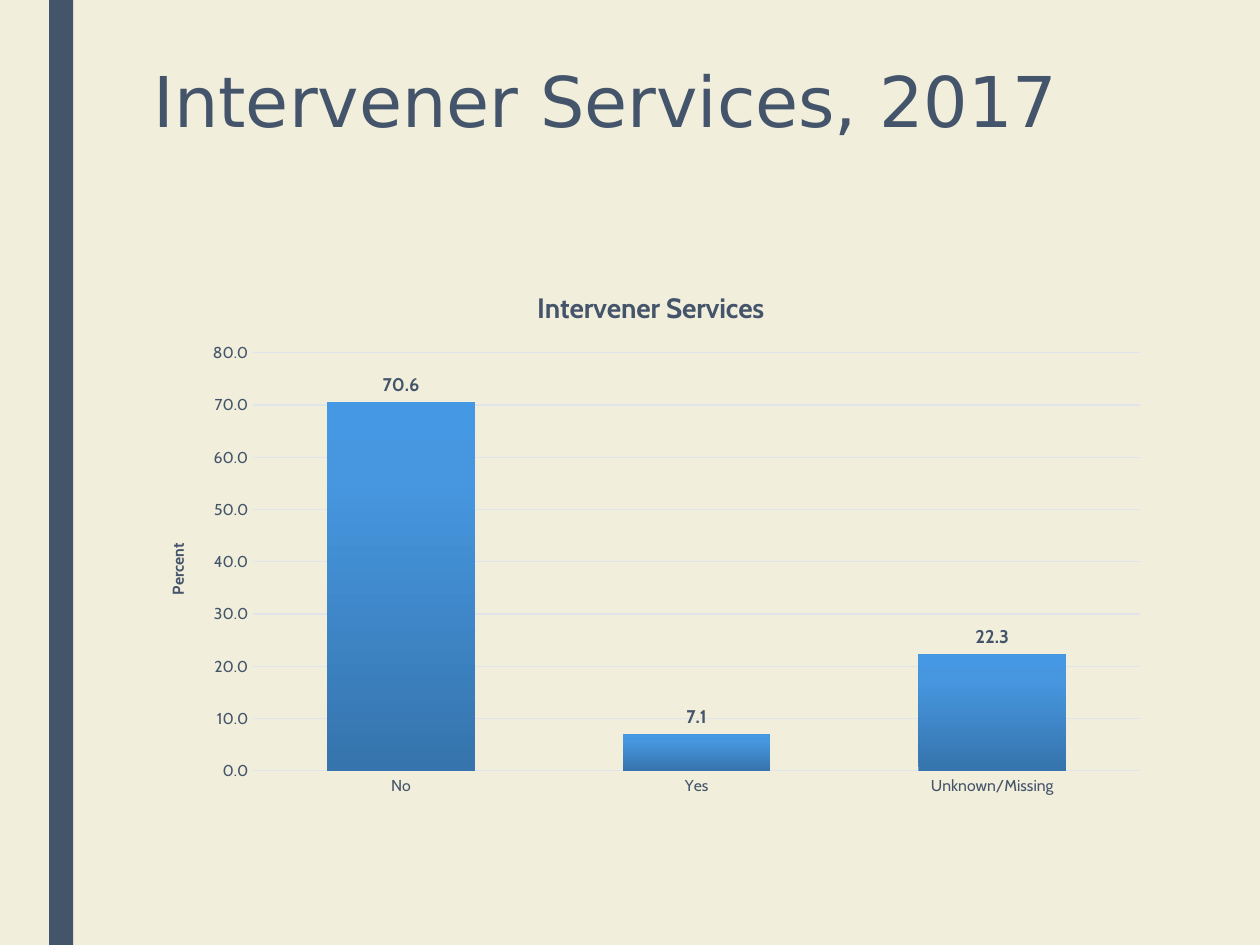
from copy import deepcopy

from pptx import Presentation
from pptx.chart.data import CategoryChartData
from pptx.dml.color import RGBColor
from pptx.enum.chart import XL_CHART_TYPE, XL_LABEL_POSITION, XL_TICK_MARK
from pptx.enum.shapes import MSO_SHAPE
from pptx.enum.text import MSO_ANCHOR, PP_ALIGN
from pptx.oxml import parse_xml
from pptx.oxml.ns import nsdecls
from pptx.util import Inches, Pt

COLORS = {"cream": "F1EEDB", "slate": "44546A", "grid": "E0E5EB"}
BAR_GRADIENT = [(0, "3674AD"), (0.8, "4697E0"), (1, "4498E4")]
PLOT_SHARES = {"x": 0.11, "y": 0.16, "w": 0.87, "h": 0.77}


def style_font(font, size, bold=False, name="Cabin", color="slate"):
    font.size = Pt(size)
    font.bold = bold
    font.name = name
    font.color.rgb = RGBColor.from_string(COLORS[color])


def write_text(frame, text, align=PP_ALIGN.CENTER, line_spacing=None, **font_format):
    paragraph = frame.paragraphs[0]
    paragraph.alignment = align
    paragraph.line_spacing = line_spacing
    run = paragraph.add_run()
    run.text = text
    style_font(run.font, **font_format)


deck = Presentation()
deck.slide_width, deck.slide_height = Inches(10), Inches(7.5)
slide = deck.slides.add_slide(deck.slide_layouts[5])
slide.background.fill.solid()
slide.background.fill.fore_color.rgb = RGBColor.from_string(COLORS["cream"])

side_band = slide.shapes.add_shape(
    MSO_SHAPE.RECTANGLE, Inches(0.39), 0, Inches(0.19), deck.slide_height)
side_band.shadow.inherit = False
side_band.fill.solid()
side_band.fill.fore_color.rgb = RGBColor.from_string(COLORS["slate"])
side_band.line.fill.background()

left = Inches(1.12)
heading = slide.shapes.title
heading.left, heading.top = left, Inches(0.49)
heading.width, heading.height = Inches(7.88), Inches(1.62)
heading.text_frame.vertical_anchor = MSO_ANCHOR.TOP
write_text(heading.text_frame, "Intervener Services, 2017", align=PP_ALIGN.LEFT,
           line_spacing=0.89, size=40, name="DejaVu Sans")

services = CategoryChartData(number_format="###0.0")
services.categories = ["No", "Yes", "Unknown/Missing"]
services.add_series("Series 1", [70.6, 7.1, 22.3])
chart = slide.shapes.add_chart(
    XL_CHART_TYPE.COLUMN_CLUSTERED, left, heading.top + heading.height,
    Inches(8.09), Inches(4.31), services).chart
style_font(chart.font, size=10)
chart.has_legend = False
write_text(chart.chart_title.text_frame, "Intervener Services", size=16, bold=True)
chart.chart_title.include_in_layout = False

answers, percent = chart.category_axis, chart.value_axis
for axis in (answers, percent):
    axis.major_tick_mark = axis.minor_tick_mark = XL_TICK_MARK.NONE
    style_font(axis.tick_labels.font, size=9)
percent.minimum_scale, percent.maximum_scale, percent.major_unit = 0, 80, 10
percent.tick_labels.number_format = "###0.0"
percent.tick_labels.number_format_is_linked = False
percent.format.line.fill.background()
write_text(percent.axis_title.text_frame, "Percent", size=9, bold=True)
for rule in (answers.format.line, percent.major_gridlines.format.line):
    rule.color.rgb = RGBColor.from_string(COLORS["grid"])
    rule.width = Pt(0.75)

plot = chart.plots[0]
plot.gap_width, plot.overlap, plot.vary_by_categories = 100, -24, False
bars = plot.series[0]
bars.invert_if_negative = False
bar_fill = bars.format.fill
bar_fill.gradient()
bar_fill.gradient_angle = 90
last_stop = bars._element.xpath(".//a:gs")[-1]
last_stop.addnext(deepcopy(last_stop))
for stop, (position, shade) in zip(bar_fill.gradient_stops, BAR_GRADIENT):
    stop.position = position
    stop.color.rgb = RGBColor.from_string(shade)

plot.has_data_labels = True
labels = plot.data_labels
labels.show_value = True
labels.position = XL_LABEL_POSITION.OUTSIDE_END
labels.number_format = "###0.0"
labels.number_format_is_linked = False
style_font(labels.font, size=10.5, bold=True)

plot_area = chart._chartSpace.xpath("c:chart/c:plotArea")[0]
for automatic in plot_area.xpath("c:layout"):
    plot_area.remove(automatic)
modes = '<c:xMode val="edge"/><c:yMode val="edge"/>'
shares = "".join(f'<c:{side} val="{share}"/>' for side, share in PLOT_SHARES.items())
plot_area.insert(0, parse_xml(
    f'<c:layout {nsdecls("c")}><c:manualLayout><c:layoutTarget val="inner"/>'
    f'{modes}{shares}</c:manualLayout></c:layout>'))

deck.save("out.pptx")
